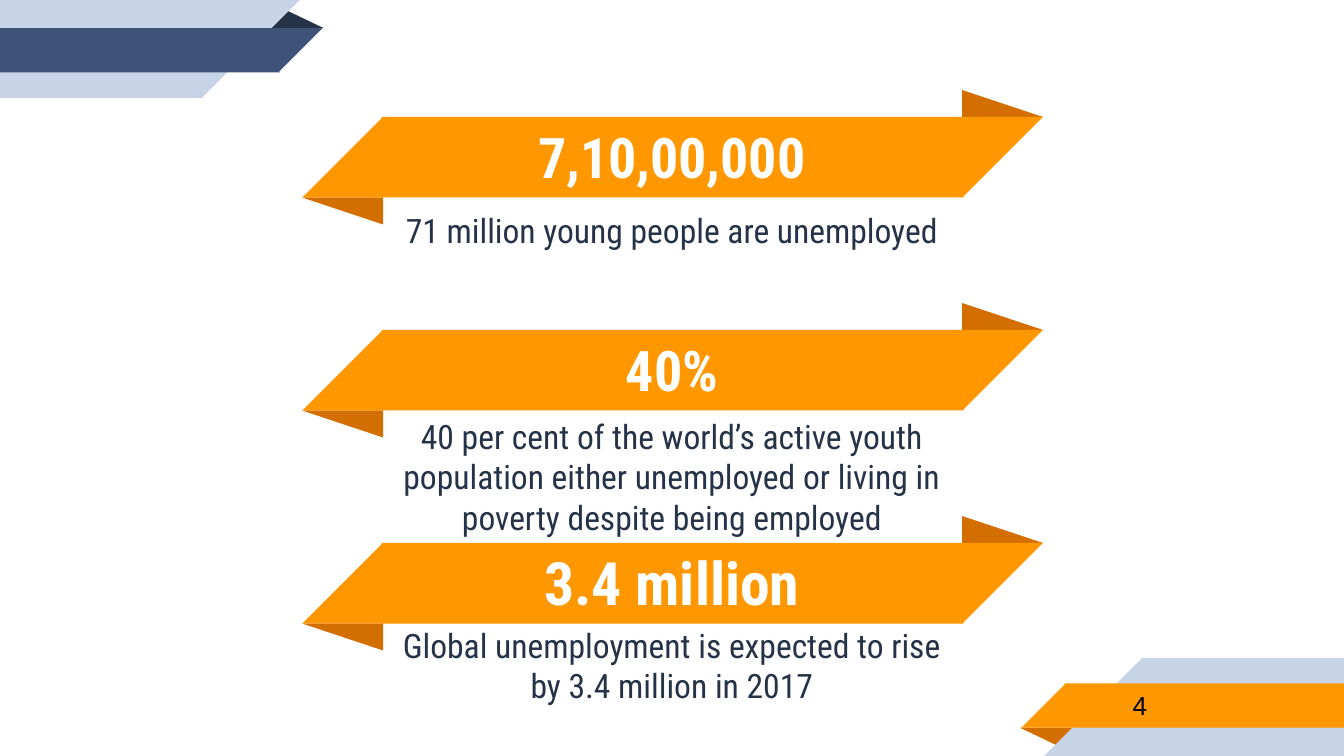
import pptx
import pptx.util
import pptx.dml.color
import pptx.enum.shapes
import pptx.enum.text

Inches = pptx.util.Inches
Kind = pptx.enum.shapes.MSO_SHAPE
Align = pptx.enum.text.PP_ALIGN

WIDE = 10
HIGH = WIDE * 9 / 16
FONT = "Roboto Condensed"
COLORS = {
    "pale": "C7D3E6",
    "blue": "3F5378",
    "navy": "263248",
    "gold": "FF9800",
    "rust": "D26F00",
    "white": "FFFFFF",
    "black": "000000",
}
# Number, its size, caption, caption height
FACTS = [
    ("7,10,00,000", 30, "71 million young people are unemployed", 0.51),
    ("40%", 30, "40 per cent of the world’s active youth population either "
     "unemployed or living in poverty despite being employed", 1),
    ("3.4 million", 32, "Global unemployment is expected to rise by "
     "3.4 million in 2017", 0.64),
]
FIRST, LAST = 0.67, 3.84


def color(name):
    return pptx.dml.color.RGBColor.from_string(COLORS[name])


def add_part(slide, kind, box, fill, turn=0, tip=None):
    part = slide.shapes.add_shape(kind, *map(Inches, box))
    part.shadow.inherit = False
    part.fill.solid()
    part.fill.fore_color.rgb = color(fill)
    part.line.fill.background()
    part.rotation = turn
    if tip is not None:
        part.adjustments[0] = tip


def set_text(shape, box, text, size, fill, font=FONT, bold=False,
             align=Align.CENTER, after=0):
    shape.left, shape.top, shape.width, shape.height = map(Inches, box)
    frame = shape.text_frame
    frame.word_wrap = True
    frame.auto_size = pptx.enum.text.MSO_AUTO_SIZE.NONE
    frame.vertical_anchor = pptx.enum.text.MSO_ANCHOR.MIDDLE
    frame.margin_left = frame.margin_right = Inches(0.1)
    frame.margin_top = frame.margin_bottom = Inches(0.1)
    para = frame.paragraphs[0]
    para.alignment = align
    para.space_after = pptx.util.Pt(after)
    run = para.add_run()
    run.text = text
    run.font.name = font
    run.font.size = pptx.util.Pt(size)
    run.font.bold = bold
    run.font.color.rgb = color(fill)


def add_box(slide):
    return slide.shapes.add_textbox(0, 0, 0, 0)


def add_corner(slide, band, fold, turned=False):
    """Top-left corner ribbon, or the same turned into the bottom right."""
    parts = [
        (Kind.ISOSCELES_TRIANGLE, (1.98, 0.07, 0.43, 0.14), fold, 0, 0.32),
        (Kind.RECTANGLE, (0, 0, 1.51, 0.73), "pale", 0, None),
        (Kind.RIGHT_TRIANGLE, (1.5, 0, 0.73, 0.73), "pale", 90, None),
        (Kind.RECTANGLE, (0, 0.21, 2.08, 0.33), band, 0, None),
        (Kind.RIGHT_TRIANGLE, (2.07, 0.21, 0.33, 0.33), band, 90, None),
    ]
    for kind, (x, y, w, h), fill, turn, tip in parts:
        if turned:
            x, y, turn = WIDE - x - w, HIGH - y - h, turn + 180
        add_part(slide, kind, (x, y, w, h), fill, turn, tip)


def add_ribbon(slide, box):
    """Slanted band with a fold above its right end and below its left."""
    x, y, w, h = box
    end, fold = 0.6, 0.2
    band, right = y + fold, x + w - end
    tall = h - 2 * fold
    add_part(slide, Kind.ISOSCELES_TRIANGLE, (right, y, end, fold),
             "rust", tip=0)
    add_part(slide, Kind.RECTANGLE,
             (x + end - 0.01, band, w - 2 * end + 0.02, tall), "gold")
    add_part(slide, Kind.RIGHT_TRIANGLE, (right, band, end, tall), "gold", 90)
    add_part(slide, Kind.RIGHT_TRIANGLE, (x, band, end, tall), "gold", 270)
    add_part(slide, Kind.ISOSCELES_TRIANGLE, (x, band + tall, end, fold),
             "rust", 180, 0)


def add_fact(slide, box, fact, head):
    """Number on the ribbon and caption below it."""
    x, y, w, h = box
    number, size, note, deep = fact
    left, wide = x + 0.61, w - 1.23
    set_text(head, (left, y + 0.2, wide, 0.58), number, size, "white",
             bold=True)
    set_text(add_box(slide), (left, y + h - 0.21, wide, deep), note, 18,
             "navy", after=10)


def main():
    deck = pptx.Presentation()
    deck.slide_width, deck.slide_height = Inches(WIDE), Inches(HIGH)
    slide = deck.slides.add_slide(deck.slide_layouts[5])

    # Corners
    add_corner(slide, "gold", "rust", turned=True)
    add_corner(slide, "blue", "navy")

    # Ribbons, evenly spaced
    step = (LAST - FIRST) / (len(FACTS) - 1)
    boxes = [(2.25, FIRST + step * i, 5.51, 1) for i in range(len(FACTS))]
    for box in boxes:
        add_ribbon(slide, box)

    # Facts: the title goes in front of its ribbon
    title = slide.shapes.title
    title.element.getparent().append(title.element)
    for i, (box, fact) in enumerate(zip(boxes, FACTS)):
        add_fact(slide, box, fact, add_box(slide) if i else title)

    # Slide number
    set_text(add_box(slide), (8.33, 5.07, 1.63, 0.35), "4", 14, "black",
             font="Arial", align=Align.LEFT)

    deck.save("out.pptx")


if __name__ == "__main__":
    main()
